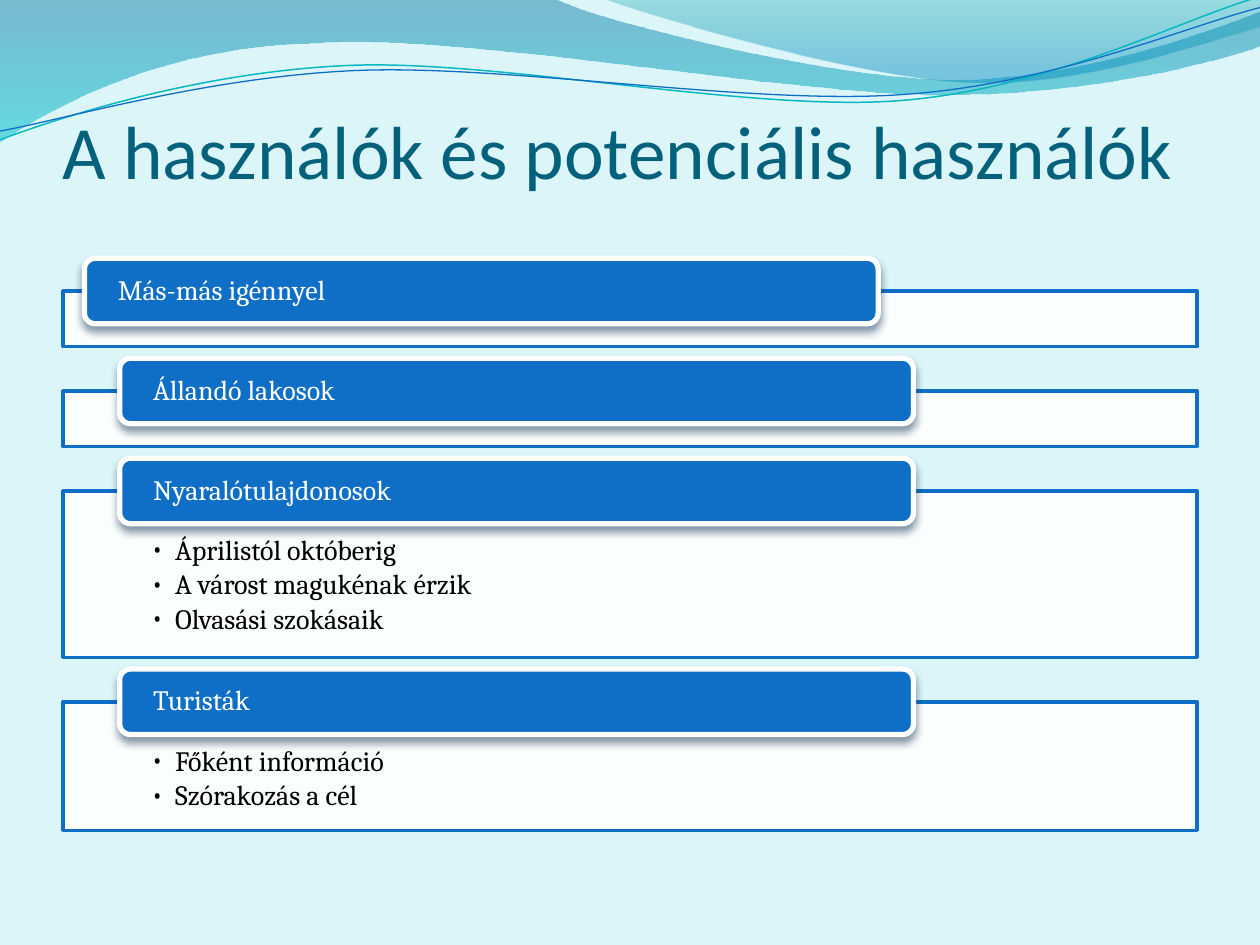
"""Build the slide on current and potential users, with four headed panels."""
from lxml.etree import SubElement
from pptx import Presentation
from pptx.dml.color import RGBColor
from pptx.enum.shapes import MSO_SHAPE
from pptx.enum.text import MSO_ANCHOR, PP_ALIGN
from pptx.oxml.ns import qn
from pptx.util import Inches, Pt

TITLE = "A használók és potenciális használók"
PANELS = [
    {"heading": "Más-más igénnyel", "indent": 0.17, "height": 0.44, "points": []},
    {"heading": "Állandó lakosok", "indent": 0.45, "height": 0.44, "points": []},
    {"heading": "Nyaralótulajdonosok", "indent": 0.45, "height": 1.32,
     "points": ["Áprilistól októberig", "A várost magukénak érzik", "Olvasási szokásaik"]},
    {"heading": "Turisták", "indent": 0.45, "height": 1.02,
     "points": ["Főként információ", "Szórakozás a cél"]},
]
COLORS = {"background": "DBF5F9", "title": "04617B", "blue": "0F6FC6", "teal": "0AB8BF",
          "white": "FFFFFF", "black": "000000", "shadow": "042747",
          "deep blue": "0074A1", "cyan": "00C6CF", "sea green": "00A1A9", "sky": "008BBF"}
BANDS = [
    {"start": (0, 0), "stops": [(0, "deep blue", 45), (1, "cyan", 55)],
     "segments": [(4.4, -0.01), (4.76, 0.17, 6.64, 0.63, 7.58, 0.63),
                  (8.53, 0.63, 9.58, 0.26, 10, 0.09), (10.01, 0.36),
                  (9.83, 0.44, 8.7, 0.76, 7.46, 0.75), (6.22, 0.75, 3.82, 0.28, 2.57, 0.34),
                  (1.29, 0.36, 0.46, 0.83, -0.01, 1.13), (0, 0)]},
    {"start": (4.79, -0.01), "stops": [(0, "sea green", 30), (0.8, "sky", 45)],
     "segments": [(5.09, 0.11, 6.82, 0.62, 7.69, 0.65), (8.56, 0.69, 9.61, 0.32, 10, 0.21),
                  (10, 0), (4.79, -0.01)]},
]
WAVES = [
    {"start": (0, 1.11), "color": "teal", "weight": 0.85,
     "segments": [(0.48, 0.93, 1.58, 0.57, 2.77, 0.52), (3.95, 0.47, 5.93, 0.89, 7.13, 0.8),
                  (8.33, 0.71, 9.38, 0.15, 9.98, -0.02)]},
    {"start": (0, 1.04), "color": "blue", "weight": 0.75,
     "segments": [(0.47, 0.96, 1.64, 0.61, 2.83, 0.56), (4.03, 0.51, 5.97, 0.84, 7.17, 0.75),
                  (8.36, 0.67, 9.41, 0.21, 10, 0.06)]},
]
WIDTH, HEIGHT = 10, 7.5
MARGIN = 0.05 * WIDTH
CONTENT_WIDTH = WIDTH - 2 * MARGIN
PANELS_TOP, PANELS_BOTTOM = 2.31, 6.59
PANEL_GAP = ((PANELS_BOTTOM - PANELS_TOP - sum(panel["height"] for panel in PANELS))
             / (len(PANELS) - 1))
HEADING_WIDTH, HEADING_HEIGHT, HEADING_RISE = 0.7 * CONTENT_WIDTH, 0.52, 0.26
BULLET_INDENT = 0.19


def rgb(name):
    return RGBColor.from_string(COLORS[name])


def set_alpha(color_element, percent):
    SubElement(color_element, qn("a:alpha"), val=str(percent * 1000))


def bend_segments(shape, segments):
    lines = iter(list(shape.element.spPr.iter(qn("a:lnTo"))))
    for segment in segments:
        line = next(lines)
        if len(segment) == 6:
            line.tag = qn("a:cubicBezTo")
            for follower in (next(lines), next(lines)):
                line.append(follower[0])
                follower.getparent().remove(follower)


def add_freeform(slide, outline, close):
    segments = outline["segments"]
    points = [tuple(map(Inches, segment[index:index + 2]))
              for segment in segments for index in range(0, len(segment), 2)]
    builder = slide.shapes.build_freeform(*map(Inches, outline["start"]))
    builder.add_line_segments(points, close=close)
    shape = builder.convert_to_shape()
    bend_segments(shape, segments)
    shape.shadow.inherit = False
    return shape


def add_band(slide, band):
    shape = add_freeform(slide, band, True)
    shape.line.fill.background()
    shape.fill.gradient()
    shape.fill.gradient_angle = 270
    for stop, (position, color, alpha) in zip(shape.fill.gradient_stops, band["stops"]):
        stop.position = position
        stop.color.rgb = rgb(color)
    colors = list(shape.element.spPr.iter(qn("a:srgbClr")))
    for element, (position, color, alpha) in zip(colors, band["stops"]):
        set_alpha(element, alpha)


def add_wave(slide, wave):
    shape = add_freeform(slide, wave, False)
    shape.fill.background()
    shape.line.color.rgb = rgb(wave["color"])
    shape.line.width = Pt(wave["weight"])


def add_box(slide, kind, box, fill, line, weight):
    shape = slide.shapes.add_shape(kind, *map(Inches, box))
    shape.shadow.inherit = False
    shape.fill.solid()
    shape.fill.fore_color.rgb = rgb(fill)
    shape.line.color.rgb = rgb(line)
    shape.line.width = Pt(weight)
    return shape


def write(shape, lines, size, font, color, anchor, insets, space_after=0, bullet=False):
    frame = shape.text_frame
    frame.word_wrap = True
    frame.vertical_anchor = anchor
    (frame.margin_left, frame.margin_top,
     frame.margin_right, frame.margin_bottom) = map(Inches, insets)
    for index, line in enumerate(lines):
        paragraph = frame.add_paragraph() if index else frame.paragraphs[0]
        paragraph.alignment = PP_ALIGN.LEFT
        paragraph.line_spacing = 0.9
        paragraph.space_after = Pt(space_after)
        if bullet:
            paragraph.level = 1
            properties = paragraph._p.get_or_add_pPr()
            properties.set("marL", str(Inches(BULLET_INDENT)))
            properties.set("indent", str(-Inches(BULLET_INDENT)))
            SubElement(properties, qn("a:buFont"), typeface=font)
            SubElement(properties, qn("a:buChar"), char="•")
        run = paragraph.add_run()
        run.text = line
        run.font.size = Pt(size)
        run.font.name = font
        run.font.color.rgb = rgb(color)


def add_heading_shadow(shape):
    effects = shape.element.spPr.find(qn("a:effectLst"))
    shadow = SubElement(effects, qn("a:outerShdw"), blurRad=str(Pt(4.5)), dist=str(Pt(3)),
                        dir="5400000", rotWithShape="0")
    set_alpha(SubElement(shadow, qn("a:srgbClr"), val=COLORS["shadow"]), 48)


def add_panel(slide, panel, top):
    body = add_box(slide, MSO_SHAPE.RECTANGLE, (MARGIN, top, CONTENT_WIDTH, panel["height"]),
                   "white", "blue", 2)
    set_alpha(body.element.spPr.find(qn("a:solidFill"))[0], 90)
    if panel["points"]:
        write(body, panel["points"], 16, "Cambria", "black", MSO_ANCHOR.TOP,
              (0.7, 0.36, 0.7, 0.12), 2.4, True)
    heading = add_box(slide, MSO_SHAPE.ROUNDED_RECTANGLE,
                      (MARGIN + panel["indent"], top - HEADING_RISE, HEADING_WIDTH, HEADING_HEIGHT),
                      "blue", "white", 3)
    add_heading_shadow(heading)
    write(heading, [panel["heading"]], 16, "Cambria", "white", MSO_ANCHOR.MIDDLE,
          (0.24, 0, 0.24, 0))


def main():
    presentation = Presentation()
    presentation.slide_width, presentation.slide_height = Inches(WIDTH), Inches(HEIGHT)
    slide = presentation.slides.add_slide(presentation.slide_layouts[6])
    slide.background.fill.solid()
    slide.background.fill.fore_color.rgb = rgb("background")
    for band in BANDS:
        add_band(slide, band)
    for wave in WAVES:
        add_wave(slide, wave)
    title = slide.shapes.add_textbox(*map(Inches, (MARGIN, 0.77, CONTENT_WIDTH, 0.78)))
    write(title, [TITLE], 43, "Calibri", "title", MSO_ANCHOR.BOTTOM, (0, 0.05, 0, 0))
    top = PANELS_TOP
    for panel in PANELS:
        add_panel(slide, panel, top)
        top += panel["height"] + PANEL_GAP
    presentation.save("out.pptx")


if __name__ == "__main__":
    main()
